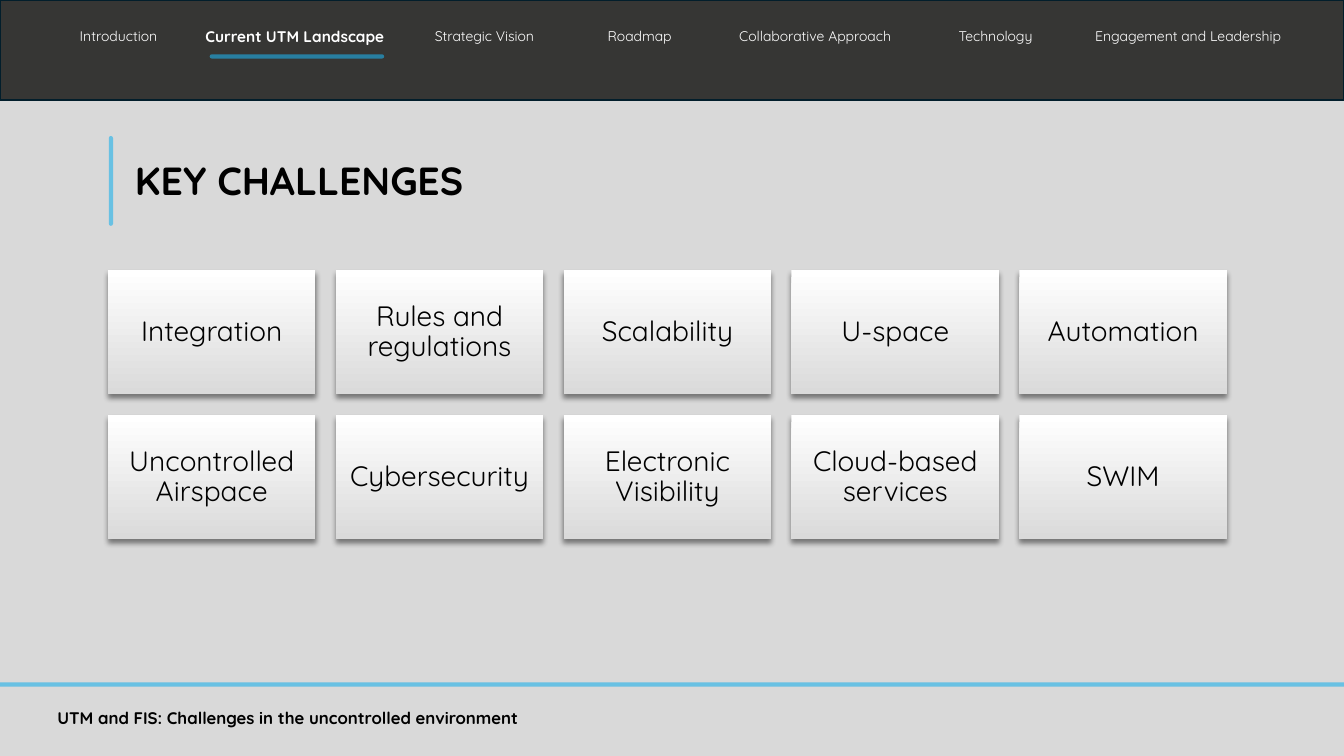
from dataclasses import dataclass

from lxml import etree
from pptx import Presentation
from pptx.dml.color import RGBColor
from pptx.enum.shapes import MSO_CONNECTOR, MSO_SHAPE
from pptx.enum.text import MSO_ANCHOR, PP_ALIGN
from pptx.oxml.ns import qn
from pptx.util import Inches, Pt

RECT = MSO_SHAPE.RECTANGLE
STRAIGHT = MSO_CONNECTOR.STRAIGHT
MIDDLE = MSO_ANCHOR.MIDDLE
TOP = MSO_ANCHOR.TOP
CENTER = PP_ALIGN.CENTER
LEFT = PP_ALIGN.LEFT
PLAIN = "{2D5ABB26-0587-4C30-8999-92F81FD0307C}"


@dataclass
class Theme:
    font: str = "Quicksand"
    page: RGBColor = RGBColor(0xD9, 0xD9, 0xD9)
    bar: RGBColor = RGBColor(0x36, 0x36, 0x34)
    edge: RGBColor = RGBColor(0x02, 0x1E, 0x2B)
    accent: RGBColor = RGBColor(0x1F, 0xB1, 0xEB)
    white: RGBColor = RGBColor(0xFF, 0xFF, 0xFF)
    shade: RGBColor = RGBColor(0xDA, 0xDA, 0xDA)
    black: RGBColor = RGBColor(0, 0, 0)
    title: int = 28
    card: int = 20
    foot: int = 12
    active: int = 11
    nav: int = 10


theme = Theme()


def write(frame, text, size, color, bold=False, align=LEFT, anchor=TOP):
    frame.word_wrap = True
    frame.vertical_anchor = anchor
    para = frame.paragraphs[0]
    para.text = text
    para.alignment = align
    font = para.font
    font.name, font.size, font.bold = theme.font, Pt(size), bold
    font.color.rgb = color
    return para


def rule(x1, y1, x2, y2):
    line = slide.shapes.add_connector(
        STRAIGHT, Inches(x1), Inches(y1), Inches(x2), Inches(y2))
    line.line.color.rgb = theme.accent
    line.line.width = Pt(3)
    props = line._element.spPr
    props.find(qn("a:ln")).set("cap", "rnd")
    tint = props.find(".//" + qn("a:srgbClr"))
    etree.SubElement(tint, qn("a:alpha"), val="60000")
    etree.SubElement(props, qn("a:effectLst"))


deck = Presentation()
deck.slide_width, deck.slide_height = Inches(13.33), Inches(7.5)
slide = deck.slides.add_slide(deck.slide_layouts[6])
slide.background.fill.solid()
slide.background.fill.fore_color.rgb = theme.page

cards = [
    ["Integration", "Rules and regulations", "Scalability", "U-space", "Automation"],
    ["Uncontrolled Airspace", "Cybersecurity", "Electronic Visibility",
     "Cloud-based services", "SWIM"],
]
for row, names in enumerate(cards):
    for col, name in enumerate(names):
        card = slide.shapes.add_shape(
            RECT, Inches(1.07 + 2.26 * col), Inches(2.68 + 1.44 * row),
            Inches(2.06), Inches(1.23))
        card.fill.gradient()
        card.fill.gradient_angle = 270
        for stop, color in zip(card.fill.gradient_stops, (theme.white, theme.shade)):
            stop.color.rgb = color
        card.line.fill.background()
        card.shadow.inherit = False
        glow = etree.SubElement(
            card._element.spPr.find(qn("a:effectLst")), qn("a:outerShdw"),
            blurRad=str(Pt(4)), dist=str(Pt(3)), dir="5400000", rotWithShape="0")
        tone = etree.SubElement(glow, qn("a:srgbClr"), val=str(theme.black))
        etree.SubElement(tone, qn("a:alpha"), val="46000")
        frame = card.text_frame
        frame.margin_left = frame.margin_right = Inches(0.08)
        frame.margin_top = frame.margin_bottom = Inches(0.08)
        para = write(frame, name, theme.card, theme.black, align=CENTER, anchor=MIDDLE)
        para.line_spacing = 0.9

rule(1.1, 1.37, 1.1, 2.22)
title = slide.shapes.add_textbox(Inches(1.24), Inches(0.96), Inches(5.55), Inches(1.65))
write(title.text_frame, "KEY CHALLENGES", theme.title, theme.black, True, anchor=MIDDLE)

bar = slide.shapes.add_shape(RECT, 0, 0, deck.slide_width, Inches(0.99))
bar.fill.solid()
bar.fill.fore_color.rgb = theme.bar
bar.line.color.rgb = theme.edge
bar.line.width = Pt(1.25)
bar.shadow.inherit = False

rule(0, 6.79, 13.33, 6.79)

tabs = [
    ("Introduction", 1.41), ("Current\u00a0UTM\u00a0Landscape".replace("\u00a0", " "), 2.09),
    ("Strategic Vision", 1.67), ("Roadmap", 1.41), ("Collaborative Approach", 2.07),
    ("Technology", 1.51), ("Engagement and Leadership", 2.31),
]
active = 1
nav = slide.shapes.add_table(
    1, len(tabs), Inches(0.47), Inches(0.22), Inches(12.46), Inches(0.41)).table
nav.first_row = nav.horz_banding = False
nav._tbl.tblPr.find(qn("a:tableStyleId")).text = PLAIN
for col, (name, width) in enumerate(tabs):
    nav.columns[col].width = Inches(width)
    cell = nav.cell(0, col)
    cell.fill.background()
    bold = col == active
    size = theme.active if bold else theme.nav
    write(cell.text_frame, name, size, theme.white, bold, CENTER)
rule(2.1, 0.56, 3.79, 0.56)

foot = slide.shapes.add_textbox(Inches(0.47), Inches(6.97), Inches(6.87), Inches(0.3))
write(foot.text_frame, "UTM and FIS: Challenges in the uncontrolled environment",
      theme.foot, theme.black, True)

deck.save("out.pptx")
